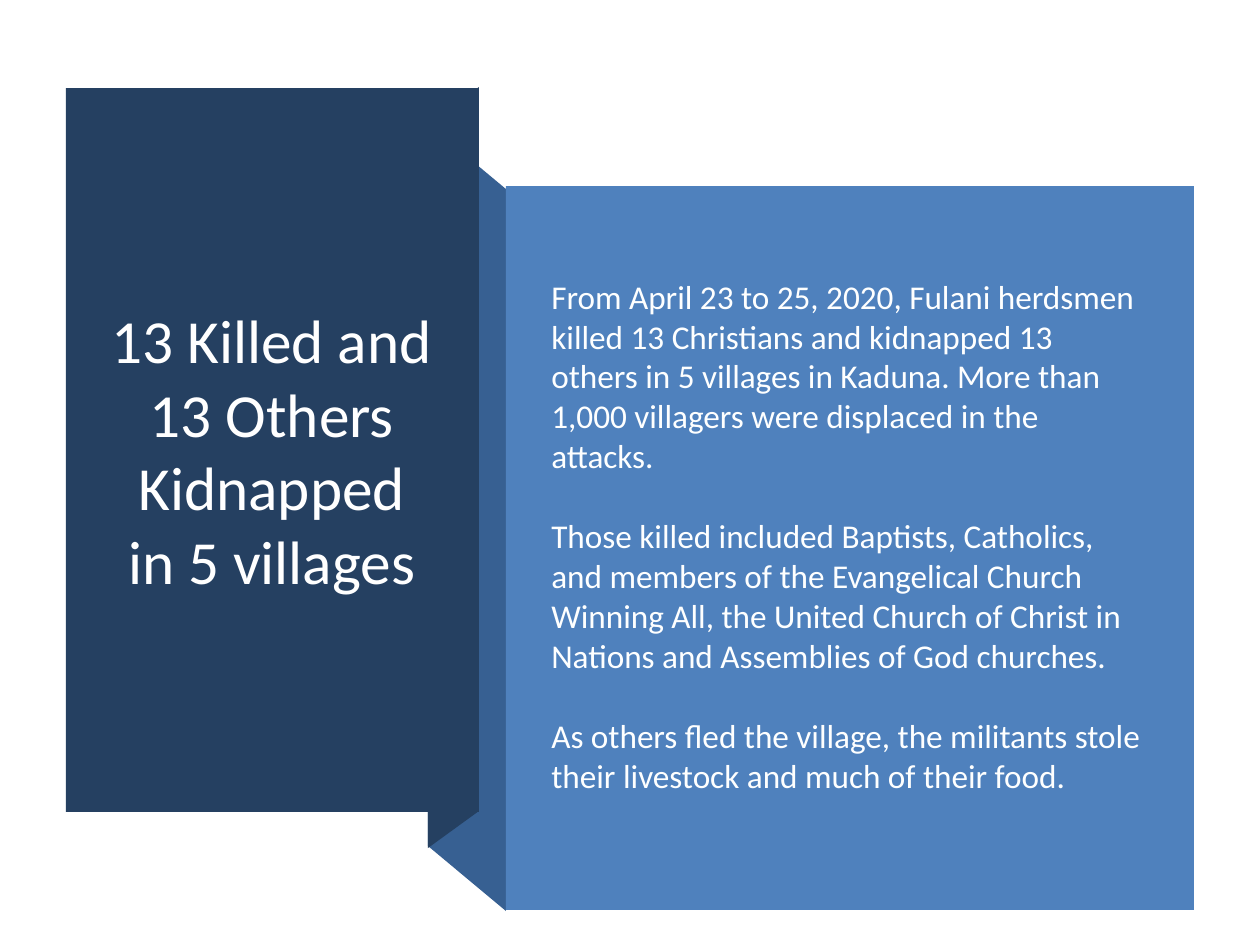
from pptx import Presentation
from pptx import util as u
from pptx.dml.color import RGBColor
from pptx.enum import shapes, text

SCALE = u.Inches(1) / 126
COLORS = {
    "navy": "254061",
    "fold": "376092",
    "blue": "4F81BD",
    "title": "FFFFFF",
    "body": "FEFFFF",
}
TITLE = "13 Killed and 13 Others Kidnapped in 5 villages"
STORY = [
    "From April 23 to 25, 2020, Fulani herdsmen killed 13 Christians and "
    "kidnapped 13 others in 5 villages in Kaduna. More than 1,000 villagers "
    "were displaced in the attacks.",
    "Those killed included Baptists, Catholics, and members of the Evangelical "
    "Church Winning All, the United Church of Christ in Nations and Assemblies "
    "of God churches.",
    "As others fled the village, the militants stole their livestock and much "
    "of their food.",
]


def px(length):
    return u.Emu(round(length * SCALE))


def paint(shape, color):
    shape.shadow.inherit = False
    shape.fill.solid()
    shape.fill.fore_color.rgb = RGBColor.from_string(COLORS[color])
    shape.line.fill.background()


def add_panel(slide, box, color):
    shape = slide.shapes.add_shape(
        shapes.MSO_SHAPE.RECTANGLE, *(px(side) for side in box))
    paint(shape, color)


def add_slanted_band(slide, box, left_drop, right_drop, color):
    """Fill a box whose two sides start at different drops and run equally long."""
    left, top, width, height = box
    side = height - max(left_drop, right_drop)
    right = left + width
    builder = slide.shapes.build_freeform(left, top + left_drop, scale=SCALE)
    builder.add_line_segments([
        (right, top + right_drop),
        (right, top + right_drop + side),
        (left, top + left_drop + side),
    ], close=True)
    paint(builder.convert_to_shape(), color)


def add_text(slide, box, paragraphs, size, color, align, first_space, space):
    frame = slide.shapes.add_textbox(*(px(side) for side in box)).text_frame
    frame.word_wrap = True
    frame.vertical_anchor = text.MSO_ANCHOR.MIDDLE
    for index, words in enumerate(paragraphs):
        paragraph = frame.add_paragraph() if index else frame.paragraphs[0]
        paragraph.alignment = align
        paragraph.space_before = u.Pt(space if index else first_space)
        run = paragraph.add_run()
        run.text = words
        run.font.name = "Calibri"
        run.font.size = u.Pt(size)
        run.font.color.rgb = RGBColor.from_string(COLORS[color])


def add_ribbon_fold(slide, box):
    """Draw the band that turns from behind the title panel to the story panel."""
    left, top, width, height = box
    add_slanted_band(slide, (left, top + 37, width, height - 37), 0, 65, "fold")
    add_slanted_band(slide, (left, top, 51, 761), 37, 0, "navy")


def add_title_panel(slide, box):
    left, top, width, height = box
    add_panel(slide, box, "navy")
    add_text(slide, (left + 31, top + 47, width - 63, height - 95), [TITLE],
             35, "title", text.PP_ALIGN.CENTER, 0, 0)


def add_story_panel(slide, box):
    left, top, width, height = box
    add_panel(slide, box, "blue")
    add_text(slide, (left + 33, top + 51, width - 73, height - 127), STORY,
             19, "body", text.PP_ALIGN.LEFT, 4, 23)


def main():
    presentation = Presentation()
    presentation.slide_width = px(1260)
    presentation.slide_height = px(945)
    slide = presentation.slides.add_slide(presentation.slide_layouts[6])
    add_ribbon_fold(slide, (428, 87, 78, 824))
    add_title_panel(slide, (66, 88, 413, 724))
    add_story_panel(slide, (506, 186, 688, 724))
    presentation.save("out.pptx")


if __name__ == "__main__":
    main()
